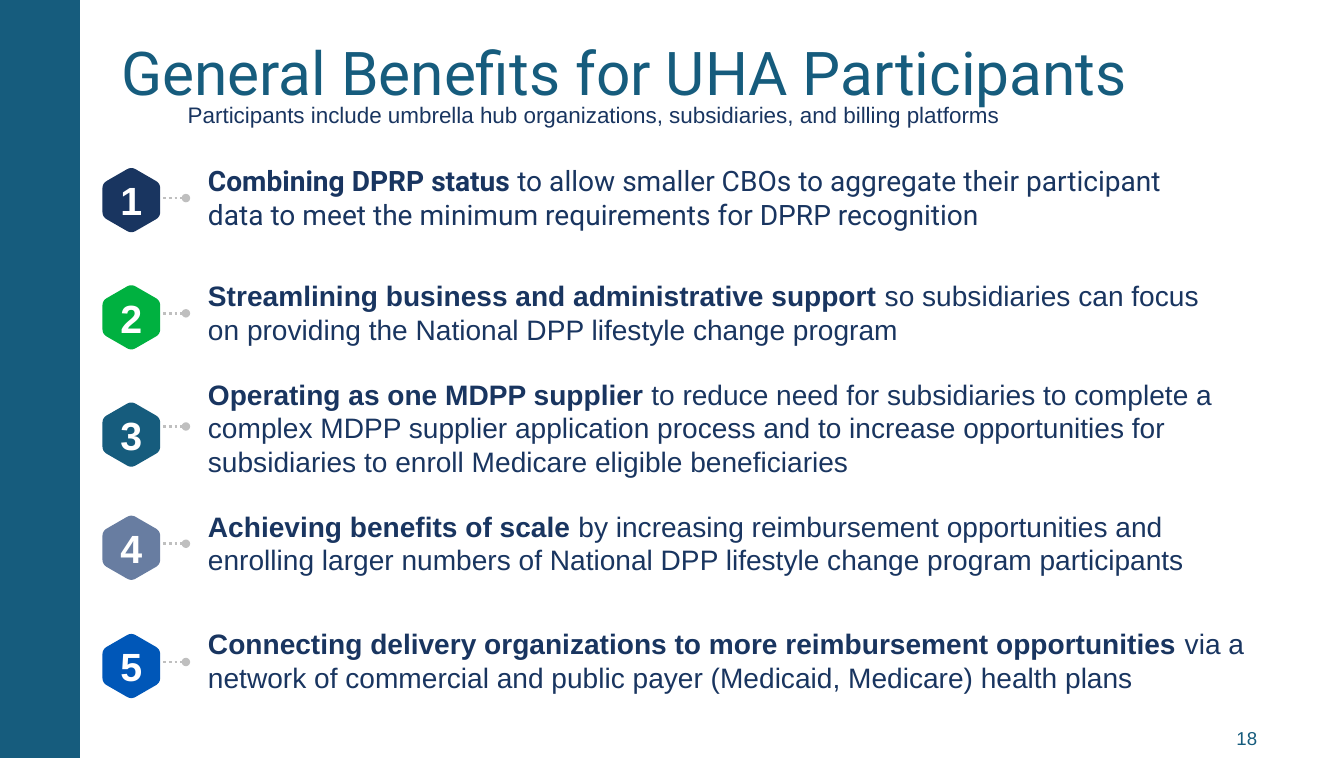
import math
from dataclasses import dataclass

from lxml import etree
from pptx import Presentation
from pptx.dml.color import RGBColor
from pptx.enum.dml import MSO_LINE
from pptx.enum.shapes import MSO_CONNECTOR, MSO_SHAPE
from pptx.enum.text import MSO_ANCHOR, MSO_AUTO_SIZE, PP_ALIGN
from pptx.oxml.ns import qn
from pptx.slide import Slide
from pptx.text.text import Font, TextFrame, _Paragraph
from pptx.util import Inches, Pt

STRAIGHT = MSO_CONNECTOR.STRAIGHT
RECTANGLE = MSO_SHAPE.RECTANGLE
DOTTED = MSO_LINE.ROUND_DOT
MIDDLE = MSO_ANCHOR.MIDDLE
TOP = MSO_ANCHOR.TOP
FIXED_SIZE = MSO_AUTO_SIZE.NONE
LEFT, CENTER, RIGHT = PP_ALIGN.LEFT, PP_ALIGN.CENTER, PP_ALIGN.RIGHT

COLORS = {
    "teal": "165C7D",
    "navy": "193560",
    "green": "00B140",
    "slate": "687DA1",
    "blue": "0057B8",
    "gray": "BFBFBF",
    "white": "FFFFFF",
}
BADGE_CENTER_X = 1.3
BADGE_WIDTH = 0.57
BADGE_RADIUS = 0.33
CORNER_CUT = 0.05
CORNER_STEPS = 6


@dataclass
class Benefit:
    lead: str
    detail: str
    color: str
    badge_y: float
    line_y: float
    text_y: float
    text_width: float
    font: str = "Arial"


BENEFITS = [
    Benefit("Combining DPRP status ",
            "to allow smaller CBOs to aggregate their participant data to meet "
            "the minimum requirements for DPRP recognition",
            "navy", 1.98, 1.96, 1.95, 10.2, "Roboto"),
    Benefit("Streamlining business and administrative support ",
            "so subsidiaries can focus on providing the National DPP lifestyle "
            "change program",
            "green", 3.14, 3.1, 3.09, 10.09),
    Benefit("Operating as one MDPP supplier ",
            "to reduce need for subsidiaries to complete a complex MDPP supplier "
            "application process and to increase opportunities for subsidiaries "
            "to enroll Medicare eligible beneficiaries",
            "teal", 4.3, 4.22, 4.23, 10.34),
    Benefit("Achieving benefits of scale ",
            "by increasing reimbursement opportunities and enrolling larger "
            "numbers of National DPP lifestyle change program participants",
            "slate", 5.42, 5.38, 5.37, 10.2),
    Benefit("Connecting delivery organizations to more reimbursement opportunities ",
            "via a network of commercial and public payer (Medicaid, Medicare) "
            "health plans",
            "blue", 6.59, 6.55, 6.53, 10.49),
]


def rgb(name: str) -> RGBColor:
    return RGBColor.from_string(COLORS[name])


def format_font(font: Font, name: str, size: float, color: str, bold: bool = False) -> None:
    font.name = name
    font.size = Pt(size)
    font.bold = bold
    font.color.rgb = rgb(color)


def add_text_box(slide: Slide, left: float, top: float, width: float, height: float,
                 anchor: MSO_ANCHOR = MIDDLE) -> TextFrame:
    shape = slide.shapes.add_textbox(Inches(left), Inches(top), Inches(width), Inches(height))
    frame = shape.text_frame
    frame.word_wrap = True
    frame.vertical_anchor = anchor
    return frame


def add_label(slide: Slide, text: str, left: float, top: float, width: float, height: float,
              size: float, color: str, alignment: PP_ALIGN = LEFT,
              anchor: MSO_ANCHOR = MIDDLE, bold: bool = False) -> _Paragraph:
    paragraph = add_text_box(slide, left, top, width, height, anchor).paragraphs[0]
    paragraph.text = text
    paragraph.alignment = alignment
    format_font(paragraph.font, "Arial", size, color, bold)
    return paragraph


def rounded_hexagon(center_x: float, center_y: float) -> list[tuple[float, float]]:
    angles = [math.radians(60 * index - 90) for index in range(6)]
    corners = [(center_x + BADGE_RADIUS * math.cos(angle),
                center_y + BADGE_RADIUS * math.sin(angle)) for angle in angles]
    cut = CORNER_CUT / BADGE_RADIUS
    points = []
    for index, corner in enumerate(corners):
        before, after = corners[index - 1], corners[(index + 1) % 6]
        for step in range(CORNER_STEPS + 1):
            t = step / CORNER_STEPS
            points.append(tuple(
                c + cut * ((1 - t) ** 2 * (b - c) + t ** 2 * (a - c))
                for b, c, a in zip(before, corner, after)))
    return points


def add_badge(slide: Slide, number: int, benefit: Benefit) -> None:
    points = [(Inches(x), Inches(y))
              for x, y in rounded_hexagon(BADGE_CENTER_X, benefit.badge_y)]
    builder = slide.shapes.build_freeform(*points[0])
    builder.add_line_segments(points[1:], close=True)
    shape = builder.convert_to_shape()
    shape.shadow.inherit = False
    shape.fill.solid()
    shape.fill.fore_color.rgb = rgb(benefit.color)
    shape.line.fill.background()
    paragraph = add_label(slide, str(number), BADGE_CENTER_X - BADGE_WIDTH / 2,
                          benefit.badge_y - 0.24, BADGE_WIDTH, 0.48,
                          28, "white", CENTER, bold=True)
    paragraph.space_before = Pt(5.6)


def add_pointer(slide: Slide, y: float) -> None:
    connector = slide.shapes.add_connector(
        STRAIGHT, Inches(1.56), Inches(y), Inches(1.84), Inches(y))
    connector.line.color.rgb = rgb("gray")
    connector.line.width = Pt(2)
    connector.line.dash_style = DOTTED
    properties = connector._element.spPr
    etree.SubElement(properties.find(qn("a:ln")), qn("a:tailEnd"), type="oval")
    etree.SubElement(properties, qn("a:effectLst"))


def add_benefit(slide: Slide, number: int, benefit: Benefit) -> None:
    frame = add_text_box(slide, 1.96, benefit.text_y - 0.46, benefit.text_width, 0.92)
    frame.margin_top = frame.margin_bottom = Inches(0.1)
    paragraph = frame.paragraphs[0]
    format_font(paragraph.font, benefit.font, 20, "navy")
    lead = paragraph.add_run()
    lead.text = benefit.lead
    lead.font.bold = True
    paragraph.add_run().text = benefit.detail
    add_pointer(slide, benefit.line_y)
    add_badge(slide, number, benefit)


def add_title(slide: Slide, text: str) -> None:
    title = slide.shapes.title
    title.left, title.top = Inches(1.1), Inches(0.28)
    title.width, title.height = Inches(11.53), Inches(0.85)
    frame = title.text_frame
    frame.auto_size = FIXED_SIZE
    frame.vertical_anchor = MIDDLE
    paragraph = frame.paragraphs[0]
    paragraph.text = text
    paragraph.alignment = LEFT
    format_font(paragraph.font, "Roboto", 43, "teal")


def main() -> None:
    presentation = Presentation()
    presentation.slide_width = Inches(13.3)
    presentation.slide_height = Inches(7.5)
    slide = presentation.slides.add_slide(presentation.slide_layouts[5])
    sidebar = slide.shapes.add_shape(RECTANGLE, 0, 0, Inches(0.79), Inches(7.5))
    sidebar.shadow.inherit = False
    sidebar.fill.solid()
    sidebar.fill.fore_color.rgb = rgb("teal")
    sidebar.line.fill.background()
    add_title(slide, "General Benefits for UHA Participants")
    for number, benefit in enumerate(BENEFITS, start=1):
        add_benefit(slide, number, benefit)
    add_label(slide, "Participants include umbrella hub organizations, subsidiaries, "
              "and billing platforms", 1.76, 0.95, 10.2, 0.37, 16, "navy", anchor=TOP)
    add_label(slide, "18", 11.31, 7.1, 1.23, 0.4, 13.3, "teal", RIGHT)
    presentation.save("out.pptx")


if __name__ == "__main__":
    main()
